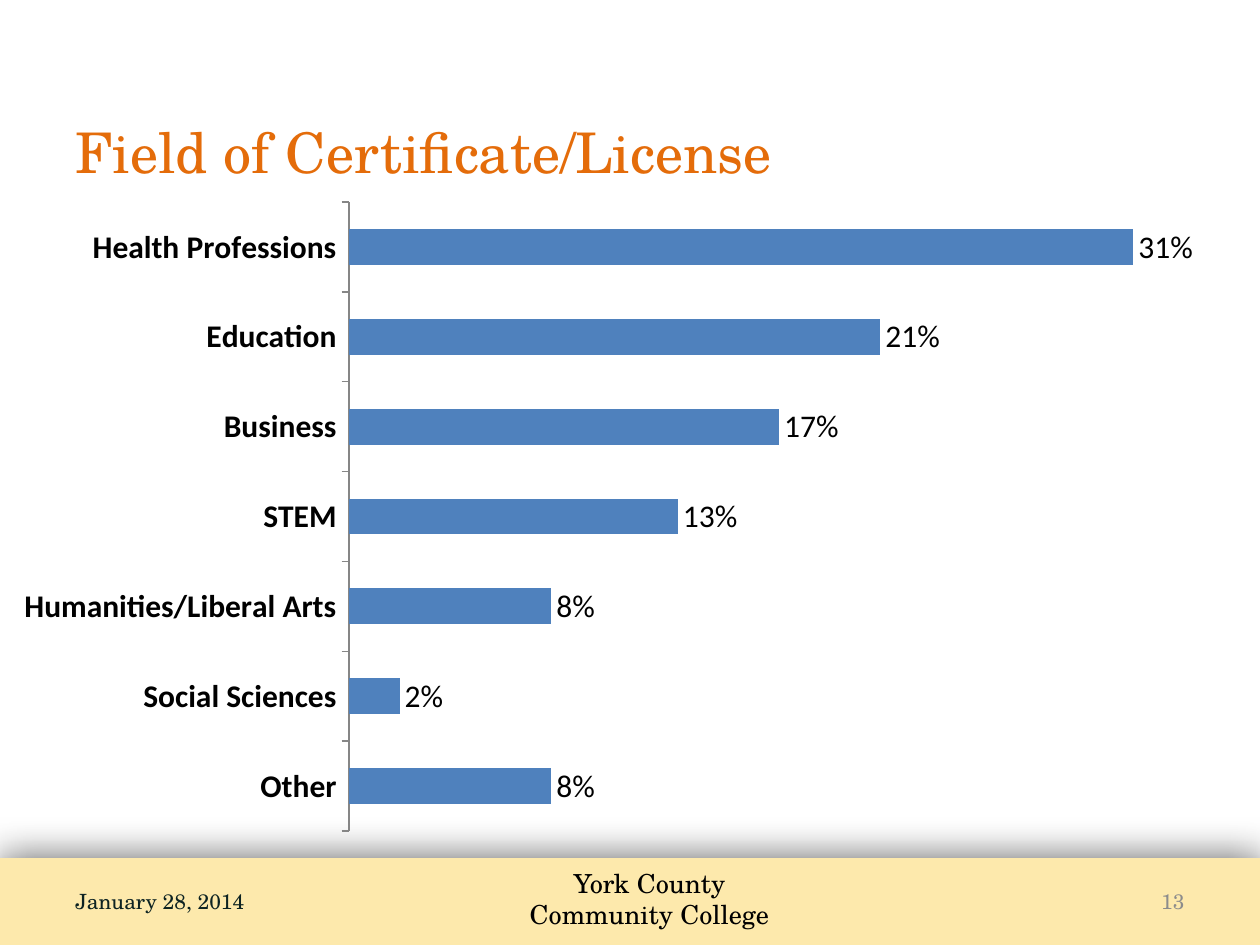
from lxml import etree
from pptx import Presentation
from pptx.chart.data import CategoryChartData
from pptx.dml.color import RGBColor
from pptx.enum import chart as ch, shapes, text
from pptx.oxml import parse_xml
from pptx.oxml.ns import nsdecls, qn
from pptx.util import Inches, Pt

COLORS = {"title": "E46C0A", "band": "FDE9AC", "bar": "4F81BD", "black": "000000",
          "date": "0D2322", "number": "8C8C8C", "axis": "868686"}
SERIF = "TeX Gyre Schola"


def color(name):
    return RGBColor.from_string(COLORS[name])


def add_text(lines, left, top, width, height, size, color_name,
             align=text.PP_ALIGN.LEFT, anchor=text.MSO_ANCHOR.MIDDLE):
    box = slide.shapes.add_textbox(Inches(left), Inches(top), Inches(width), Inches(height))
    frame = box.text_frame
    frame.word_wrap = True
    frame.vertical_anchor = anchor
    frame.text = "\n".join(lines)
    for paragraph in frame.paragraphs:
        paragraph.alignment = align
        paragraph.font.name = SERIF
        paragraph.font.size = Pt(size)
        paragraph.font.color.rgb = color(color_name)


prs = Presentation()
prs.slide_width, prs.slide_height = Inches(10), Inches(7.5)
slide = prs.slides.add_slide(prs.slide_layouts[6])

# Footer band with a soft glow-like shadow
band = slide.shapes.add_shape(shapes.MSO_SHAPE.RECTANGLE,
                              Inches(0), Inches(6.81), Inches(10), Inches(0.69))
band.fill.solid()
band.fill.fore_color.rgb = color("band")
band.line.fill.background()
band.shadow.inherit = False
effects = band.element.spPr.find(qn("a:effectLst"))
effects.append(parse_xml(
    f'<a:outerShdw {nsdecls("a")} blurRad="{Pt(23.8)}" dist="0" dir="18000000" rotWithShape="0">'
    f'<a:srgbClr val="{COLORS["black"]}"><a:alpha val="65000"/></a:srgbClr></a:outerShdw>'))

add_text(["York County", "Community College"], 3.87, 6.83, 2.57, 0.61, 15, "black",
         text.PP_ALIGN.CENTER, text.MSO_ANCHOR.TOP)
add_text(["Field of Certificate/License"], 0.5, 0.82, 9, 0.76, 32, "title")
add_text(["January 28, 2014"], 0.5, 6.95, 2.5, 0.4, 12, "date")
add_text(["13"], 7.17, 6.95, 2.33, 0.4, 12, "number", text.PP_ALIGN.RIGHT)

# Share of certificates by field
shares = {"Health Professions": 0.31, "Education": 0.21, "Business": 0.17, "STEM": 0.13,
          "Humanities/Liberal Arts": 0.08, "Social Sciences": 0.02, "Other": 0.08}
data = CategoryChartData(number_format="0%")
data.categories = list(shares)
data.add_series("Series 1", list(shares.values()))
chart = slide.shapes.add_chart(ch.XL_CHART_TYPE.BAR_CLUSTERED, Inches(0), Inches(1.5),
                               Inches(10), Inches(5.2), data).chart
chart.has_legend = False
chart.has_title = False
chart.font.name = "Calibri"
chart.font.size = Pt(18)
chart.font.color.rgb = color("black")

fields = chart.category_axis
fields.reverse_order = True
fields.major_tick_mark = ch.XL_TICK_MARK.OUTSIDE
fields.has_major_gridlines = False
fields.tick_labels.font.bold = True
fields.format.line.color.rgb = color("axis")
fields.format.line.width = Pt(0.75)

percent = chart.value_axis
percent.visible = False
percent.has_major_gridlines = False
percent.minimum_scale, percent.maximum_scale = 0, 0.35
percent.tick_labels.number_format = "0%"
percent.tick_labels.number_format_is_linked = False

plot = chart.plots[0]
plot.gap_width = 150
plot.vary_by_categories = False
bars = plot.series[0]
bars.format.fill.solid()
bars.format.fill.fore_color.rgb = color("bar")
labels = bars.data_labels
labels.show_value = True
labels.number_format = "0%"
labels.number_format_is_linked = False
labels.position = ch.XL_LABEL_POSITION.OUTSIDE_END

# Fixed inner plot area, as fractions of the chart
plot_area = chart.element.chart.plotArea
for old_layout in plot_area.findall(qn("c:layout")):
    plot_area.remove(old_layout)
layout = parse_xml(f'<c:layout {nsdecls("c")}><c:manualLayout/></c:layout>')
plot_area.insert(0, layout)
for tag, value in [("layoutTarget", "inner"), ("xMode", "edge"), ("yMode", "edge"),
                   ("x", "0.277"), ("y", "0.02"), ("w", "0.703"), ("h", "0.96")]:
    etree.SubElement(layout[0], qn(f"c:{tag}")).set("val", value)

prs.save("out.pptx")
